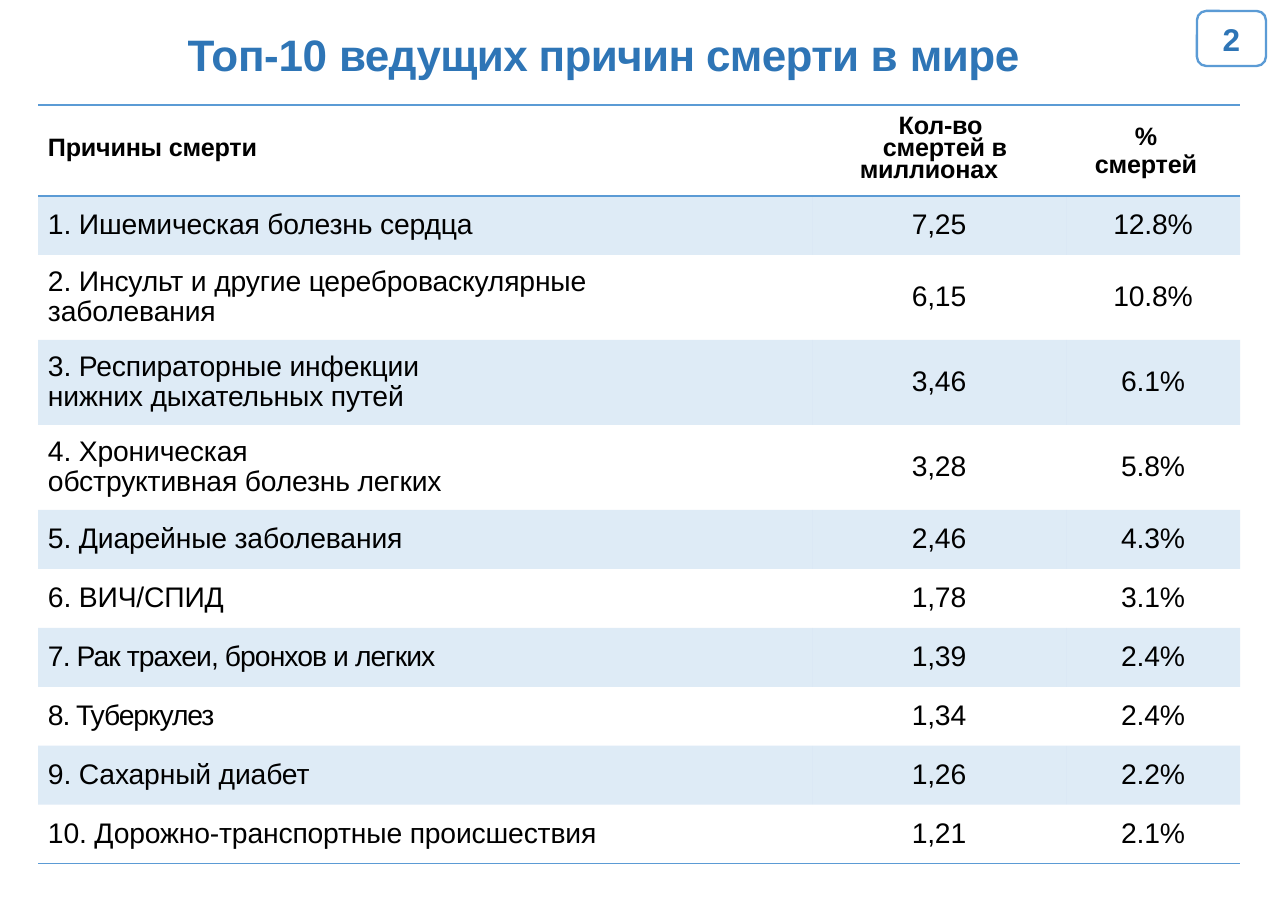
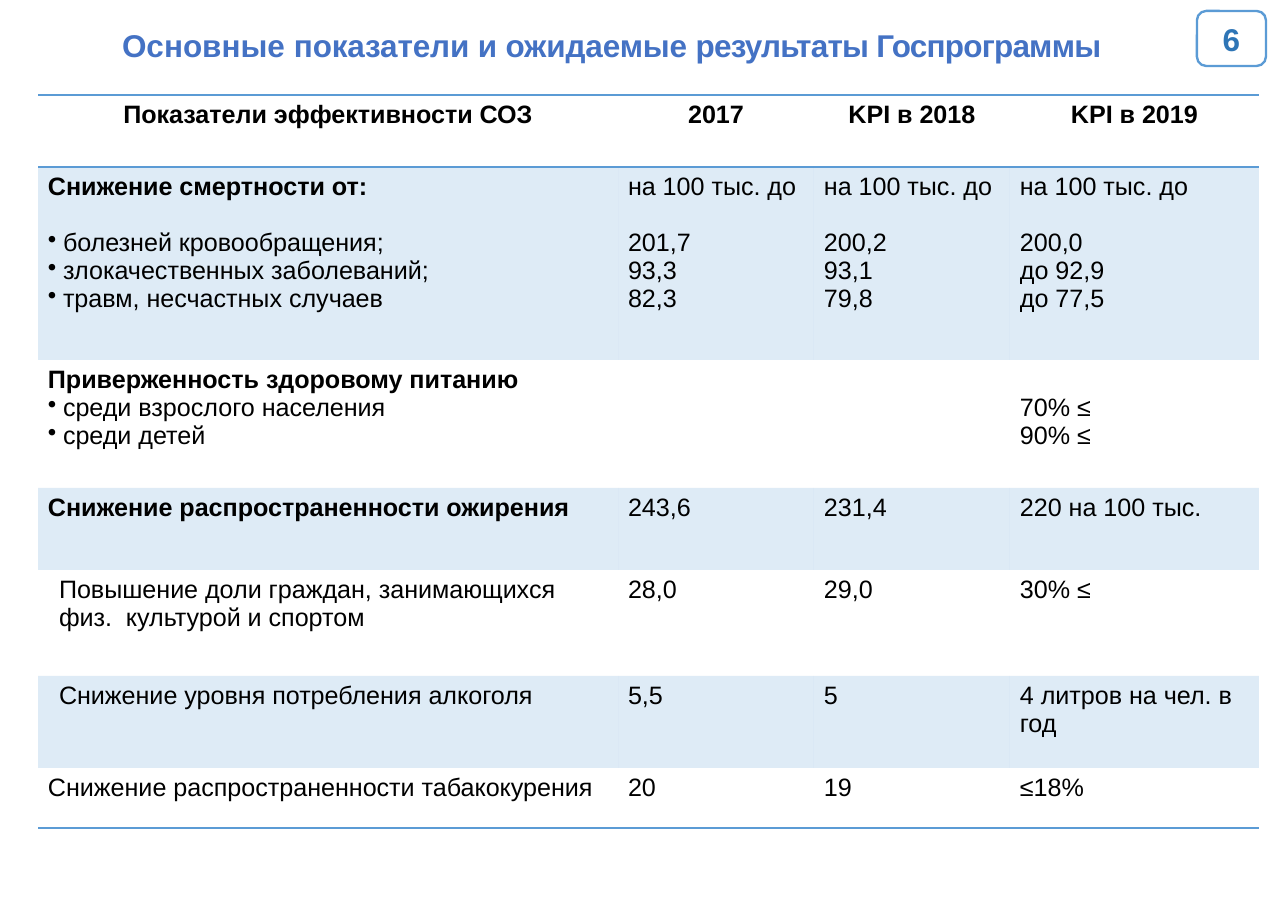
from lxml import etree
from pptx import Presentation, util as u
from pptx.dml.color import RGBColor
from pptx.enum import shapes, text
from pptx.oxml import ns

PX = 914400 / 113.2  # EMU in one px
FONT = "Arial"
HUES = {"blue": "5B9BD5", "title": "2E75B6", "royal": "4472C4",
        "black": "000000", "white": "FFFFFF"}
PLAIN = "{2D5ABB26-0587-4C30-8999-92F81FD0307C}"  # table style with no grid
MID, LEFT = text.PP_ALIGN.CENTER, text.PP_ALIGN.LEFT
MIDDLE, TOP = text.MSO_ANCHOR.MIDDLE, text.MSO_ANCHOR.TOP

CAUSES = [
    ("Причины смерти", "Кол-во смертей в\nмиллионах", "%\nсмертей"),
    ("1. Ишемическая болезнь сердца", "7,25", "12.8%"),
    ("2. Инсульт и другие цереброваскулярные заболевания", "6,15", "10.8%"),
    ("3. Респираторные инфекции\nнижних дыхательных путей", "3,46", "6.1%"),
    ("4. Хроническая\nобструктивная болезнь легких", "3,28", "5.8%"),
    ("5. Диарейные заболевания", "2,46", "4.3%"),
    ("6. ВИЧ/СПИД", "1,78", "3.1%"),
    ("7. Рак трахеи, бронхов и легких", "1,39", "2.4%"),
    ("8. Туберкулез", "1,34", "2.4%"),
    ("9. Сахарный диабет", "1,26", "2.2%"),
    ("10. Дорожно-транспортные происшествия", "1,21", "2.1%"),
]
GOALS = [
    ("Показатели эффективности СОЗ", "2017", "KPI в 2018", "KPI в 2019"),
    ("Снижение смертности от:\n• болезней кровообращения;\n"
     "• злокачественных заболеваний;\n• травм, несчастных случаев",
     "на 100 тыс. до\n201,7\n93,3\n82,3",
     "на 100 тыс. до\n200,2\n93,1\n79,8",
     "на 100 тыс. до\n200,0\nдо 92,9\nдо 77,5"),
    ("Приверженность здоровому питанию\n• среди взрослого населения\n"
     "• среди детей", "", "", "70% ≤\n90% ≤"),
    ("Снижение распространенности ожирения", "243,6", "231,4",
     "220 на 100 тыс."),
    ("Повышение доли граждан, занимающихся физ.  культурой и спортом",
     "28,0", "29,0", "30% ≤"),
    ("Снижение уровня потребления алкоголя", "5,5", "5",
     "4 литров на чел. в год"),
    ("Снижение распространенности табакокурения", "20", "19", "≤18%"),
]


def px(num):
    return u.Emu(round(num * PX))


def hue(name):
    return RGBColor.from_string(HUES[name])


def style(run, size, color="black", bold=False, gap=0):
    """Set the font of a run; gap is letter spacing in points."""
    font = run.font
    font.name, font.size, font.bold = FONT, u.Pt(size), bold
    font.color.rgb = hue(color)
    if gap:
        run._r.get_or_add_rPr().set("spc", str(round(gap * 100)))


def indent(par, left=0, first=0, right=0):
    props = par._p.get_or_add_pPr()
    for key, num in (("marL", left), ("indent", first), ("marR", right)):
        props.set(key, str(px(num)))


def bullet(par):
    par.text = par.text.removeprefix("• ")
    indent(par, 15, -15)
    mark = etree.SubElement(par._p.get_or_add_pPr(), ns.qn("a:buChar"))
    mark.set("char", "•")


# Title and page badge
def title(slide, box, parts, size, color, top, left=0):
    shape = slide.shapes.add_textbox(*map(px, box))
    frame = shape.text_frame
    frame.word_wrap, frame.vertical_anchor = True, MIDDLE
    frame.margin_left = frame.margin_right = frame.margin_bottom = 0
    frame.margin_top = px(top)
    par = frame.paragraphs[0]
    par.alignment = MID
    indent(par, left)
    for words, gap in parts:
        run = par.add_run()
        run.text = words
        style(run, size, color, True, gap)


def badge(slide, num):
    kind = shapes.MSO_SHAPE.ROUNDED_RECTANGLE
    shape = slide.shapes.add_shape(kind, *map(px, (1197, 11, 69, 55)))
    shape.shadow.inherit = False
    shape.fill.solid()
    shape.fill.fore_color.rgb = hue("white")
    shape.line.color.rgb = hue("blue")
    shape.line.width = u.Pt(1.5)
    frame = shape.text_frame
    frame.text = str(num)
    frame.vertical_anchor = MIDDLE
    par = frame.paragraphs[0]
    par.alignment = MID
    style(par.runs[0], 20, "title", True)


# Table parts
def tint(cell):
    cell.fill.solid()
    cell.fill.fore_color.rgb = hue("blue")
    color = cell._tc.tcPr.find(".//" + ns.qn("a:srgbClr"))
    etree.SubElement(color, ns.qn("a:alpha")).set("val", "20000")


def rule(cell, side):
    line = etree.Element(ns.qn("a:ln" + side), w=str(u.Pt(1)))
    fill = etree.SubElement(line, ns.qn("a:solidFill"))
    etree.SubElement(fill, ns.qn("a:srgbClr")).set("val", HUES["blue"])
    cell._tc.get_or_add_tcPr().insert(0, line)


def grid(slide, spot, cols, rows, data, pads, anchor):
    """Add a table with tinted odd rows, a ruled head and a ruled foot."""
    size = (sum(cols), sum(rows))
    table = slide.shapes.add_table(len(rows), len(cols),
                                   *map(px, spot + size)).table
    table.first_row = table.horz_banding = False
    table._tbl.tblPr.find(ns.qn("a:tableStyleId")).text = PLAIN
    for col, wide in zip(table.columns, cols):
        col.width = px(wide)
    for row, high in zip(table.rows, rows):
        row.height = px(high)
    for r, line in enumerate(data):
        for c, words in enumerate(line):
            cell = table.cell(r, c)
            cell.margin_left = cell.margin_right = px(pads[0])
            cell.margin_top = cell.margin_bottom = px(pads[1])
            cell.vertical_anchor = anchor
            if words:
                cell.text_frame.text = words
            if r % 2:
                tint(cell)
            else:
                cell.fill.background()
            if r in (0, len(rows) - 1):
                rule(cell, "B")
            if r == 0:
                rule(cell, "T")
    return table


def cells(table):
    """Yield each cell's place, the cell and its paragraphs."""
    for r, row in enumerate(table.rows):
        for c, cell in enumerate(row.cells):
            yield r, c, cell, cell.text_frame.paragraphs


# Leading causes of death
def causes(slide):
    title(slide, (55, 25, 1097, 55),
          [("Топ-10 ", -0.2), ("ведущих причин смерти ", -0.4),
           ("в ", 0), ("мире", -0.3)], 28, "title", 2)
    rows = [91, 59, 85, 85, 85] + [59] * 6
    table = grid(slide, (38, 105), (774, 254, 174), rows, CAUSES,
                 (0, 0), MIDDLE)
    tight = {7: -0.6, 8: -0.7}
    for r, c, cell, pars in cells(table):
        for par in pars:
            par.alignment = MID if c else LEFT
            if c == 0:
                indent(par, 10, 0, 120)
            if r:
                par.line_spacing = u.Pt(18.9)
            elif c < 2:
                par.line_spacing = u.Pt(14.1)
            gap = tight.get(r, -0.1) if c == 0 else -0.1
            style(par.runs[0], 18 if r else 16, bold=r == 0, gap=gap)
    # The two number heads sit off centre
    count, unit = table.cell(0, 1).text_frame.paragraphs
    indent(count, 42, -9, 30)
    indent(unit, 10, 0, 30)
    for par in table.cell(0, 2).text_frame.paragraphs:
        indent(par, 0, 0, 14)
    badge(slide, 2)


# Programme indicators
def goals(slide):
    title(slide, (0, 20, 1178, 44),
          [("Основные ", 0), ("показатели и ожидаемые ", -0.1),
           ("результаты Госпрограммы", -0.5)], 20, "royal", 6, 45)
    rows = (72, 193, 128, 82, 106, 92, 60)
    table = grid(slide, (38, 95), (580, 196, 196, 249), rows, GOALS,
                 (10, 6), TOP)
    for r, c, cell, pars in cells(table):
        for i, par in enumerate(pars):
            par.alignment = LEFT if r else MID
            if par.text.startswith("•"):
                bullet(par)
            if r == 1 and i == 1:
                par.space_before = px(28)
            if c == 0 and r in (4, 5):
                indent(par, 11)
            bold = r == 0 or (c == 0 and i == 0 and r < 4)
            for run in par.runs:
                style(run, 16, bold=bold)
    # Healthy eating targets start one line lower
    table.cell(2, 3).margin_top = px(34)
    badge(slide, 6)


def main():
    deck = Presentation()
    deck.slide_width, deck.slide_height = px(1288), px(906)
    blank = deck.slide_layouts[6]
    for build in (causes, goals):
        build(deck.slides.add_slide(blank))
    deck.save("out.pptx")


if __name__ == "__main__":
    main()
